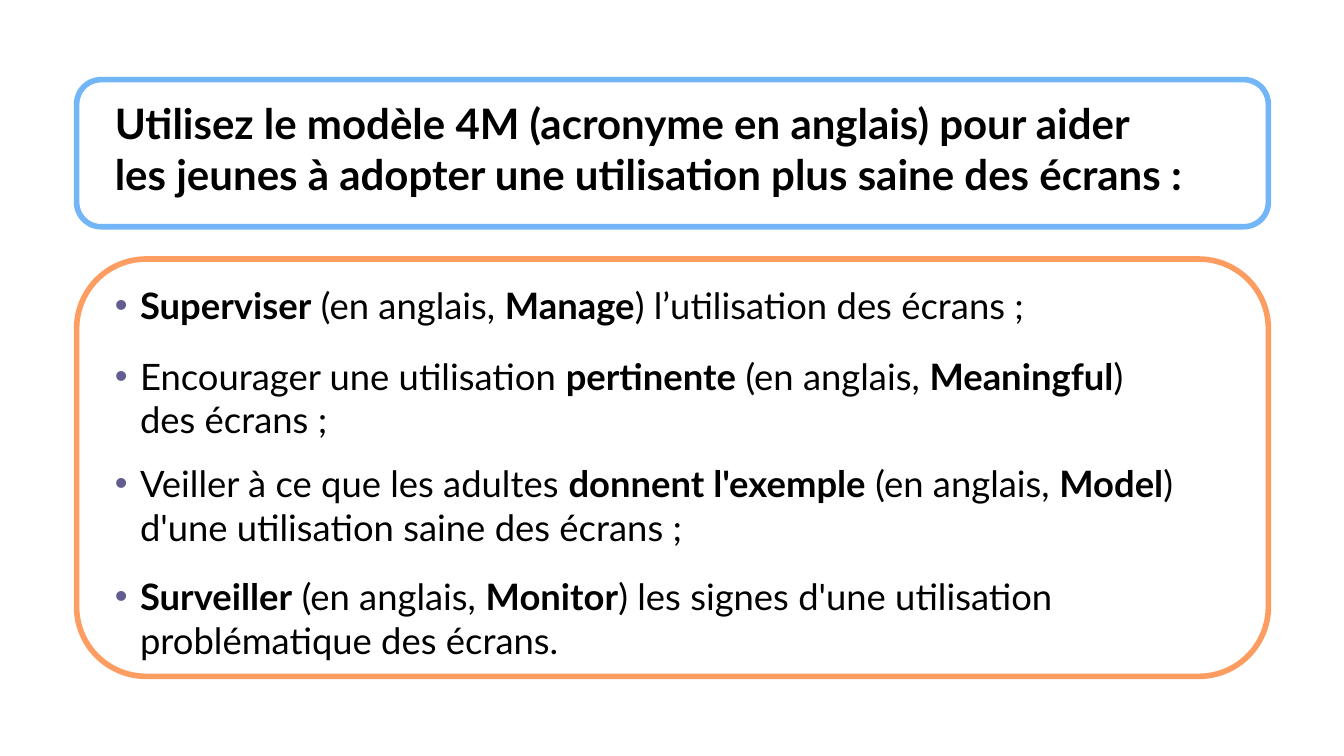
"""Build the slide on the 4M model for healthier screen use."""
from lxml.etree import SubElement
from pptx import Presentation
from pptx.dml.color import RGBColor
from pptx.enum.shapes import MSO_SHAPE
from pptx.oxml.ns import qn
from pptx.util import Pt

PX = 9144
FONT = "Lato"
BLACK = RGBColor(0x00, 0x00, 0x00)
BLUE = RGBColor(0x73, 0xB6, 0xF7)
ORANGE = RGBColor(0xFD, 0x9D, 0x62)
PURPLE = RGBColor(0x62, 0x5D, 0x90)

TITLE = (
    "**Utilisez le modèle 4M (acronyme en anglais) pour aider\n"
    "les jeunes à adopter une utilisation plus saine des écrans :**"
)
ITEMS = [
    (276, 57, "**Superviser** (en anglais, **Manage**) l’utilisation des écrans ;"),
    (346, 96, "Encourager une utilisation **pertinente** (en anglais, **Meaningful**)\n"
              "des écrans ;"),
    (453, 96, "Veiller à ce que les adultes **donnent l'exemple** (en anglais, **Model**) "
              "d'une utilisation saine des écrans ;"),
    (565, 96, "**Surveiller** (en anglais, **Monitor**) les signes d'une utilisation "
              "problématique des écrans."),
]
FRAMES = [(79, 146, BLUE), (257, 414, ORANGE)]
FRAME_LEFT, FRAME_WIDTH = 76, 1182
TEXT_LEFT, TEXT_WIDTH = 104, 1118
INDENT = 25


def add_frame(slide, top, height, color):
    frame = slide.shapes.add_shape(
        MSO_SHAPE.ROUNDED_RECTANGLE,
        FRAME_LEFT * PX, top * PX, FRAME_WIDTH * PX, height * PX)
    frame.shadow.inherit = False
    frame.fill.background()
    frame.line.color.rgb = color
    frame.line.width = Pt(4)


def add_bullet(para):
    properties = para._p.get_or_add_pPr()
    properties.set("marL", str(INDENT * PX))
    properties.set("indent", str(-INDENT * PX))
    color = SubElement(properties, qn("a:buClr"))
    SubElement(color, qn("a:srgbClr"), val=str(PURPLE))
    SubElement(properties, qn("a:buFont"), typeface="Arial")
    SubElement(properties, qn("a:buChar"), char="•")


def add_text(slide, top, height, marked_text, size, bulleted=False):
    box = slide.shapes.add_textbox(
        TEXT_LEFT * PX, top * PX, TEXT_WIDTH * PX, height * PX)
    box.text_frame.word_wrap = True
    para = box.text_frame.paragraphs[0]
    if bulleted:
        add_bullet(para)
    para.font.size = Pt(size)
    for part_index, part in enumerate(marked_text.split("**")):
        for line_index, line in enumerate(part.split("\n")):
            if line_index:
                para.add_line_break()
            if line:
                span = para.add_run()
                span.text = line
                span.font.name = FONT
                span.font.size = Pt(size)
                span.font.bold = part_index % 2 == 1
                span.font.color.rgb = BLACK


def main():
    deck = Presentation()
    deck.slide_width, deck.slide_height = 1333 * PX, 750 * PX
    slide = deck.slides.add_slide(deck.slide_layouts[6])
    for top, height, color in FRAMES:
        add_frame(slide, top, height, color)
    add_text(slide, 92, 111, TITLE, 30)
    for top, height, item in ITEMS:
        add_text(slide, top, height, item, 26, bulleted=True)
    deck.save("out.pptx")


if __name__ == "__main__":
    main()
